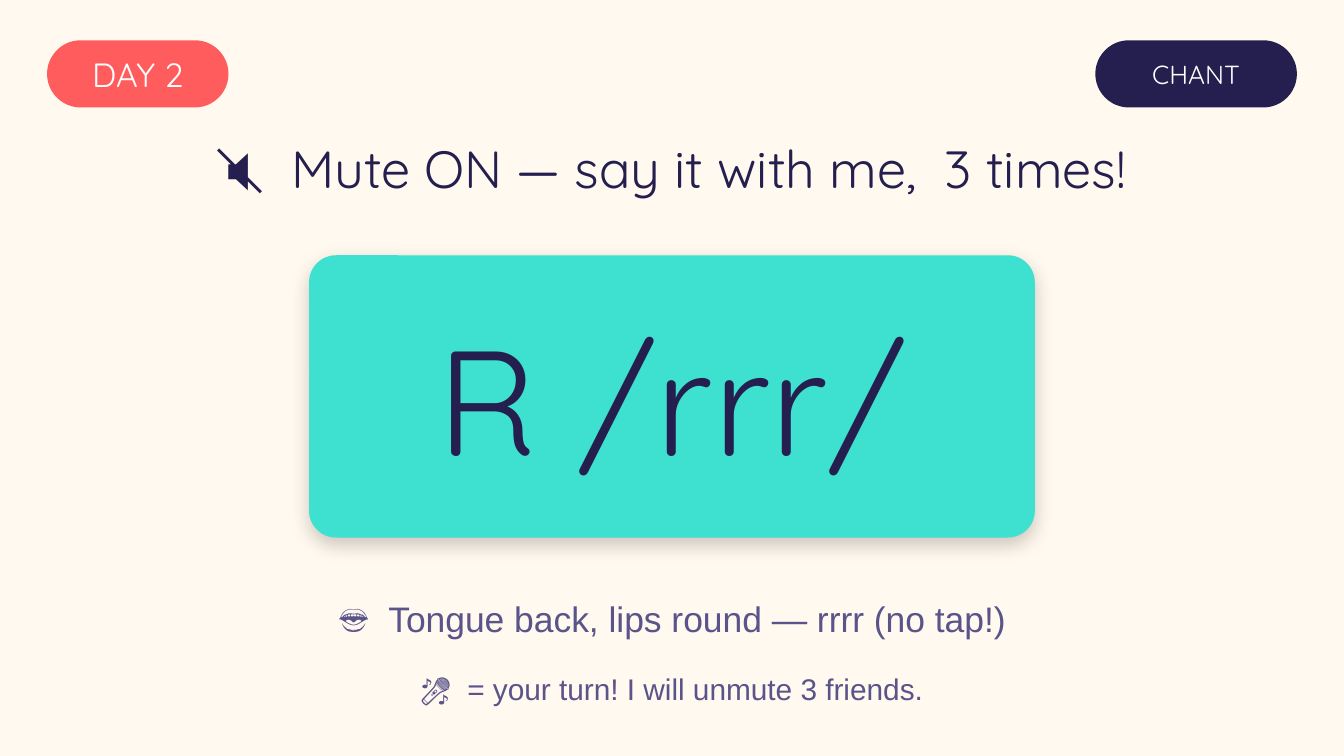
from dataclasses import dataclass

from lxml.etree import SubElement
from pptx import Presentation
from pptx.dml.color import RGBColor
from pptx.enum.shapes import MSO_SHAPE as Shape
from pptx.enum.text import MSO_ANCHOR as Anchor, PP_ALIGN as Align
from pptx.oxml.ns import qn
from pptx.shapes.autoshape import Shape as AutoShape
from pptx.slide import Slide
from pptx.util import Inches, Pt

CREAM, CORAL, NAVY, TEAL = "FFF9EF", "FF5D5D", "241F4E", "3EE0CF"
WHITE, VIOLET, BLACK = "FFFFFF", "5A548A", "000000"
HEADING, BODY = "Quicksand", "Arial"


@dataclass(frozen=True)
class Box:
    left: float
    top: float
    width: float
    height: float

    def lengths(self) -> tuple:
        return tuple(map(Inches, (self.left, self.top, self.width, self.height)))


@dataclass(frozen=True)
class Label:
    text: str
    box: Box
    size: int
    color: str
    font: str = HEADING
    inset: float | None = None


@dataclass(frozen=True)
class Panel:
    box: Box
    fill: str
    rounding: float


def rgb(value: str) -> RGBColor:
    return RGBColor.from_string(value)


def draw_panel(slide: Slide, panel: Panel) -> AutoShape:
    shape = slide.shapes.add_shape(Shape.ROUNDED_RECTANGLE, *panel.box.lengths())
    shape.adjustments[0] = panel.rounding
    shape.shadow.inherit = False
    shape.fill.solid()
    shape.fill.fore_color.rgb = rgb(panel.fill)
    shape.line.fill.background()
    return shape


def cast_shadow(shape: AutoShape) -> None:
    effects = shape._element.spPr.find(qn("a:effectLst"))
    shadow = SubElement(effects, qn("a:outerShdw"), blurRad=str(Pt(10)),
                        dist=str(Pt(4)), dir=str(90 * 60000), rotWithShape="0")
    color = SubElement(shadow, qn("a:srgbClr"), val=BLACK)
    SubElement(color, qn("a:alpha"), val=str(20 * 1000))


def draw_label(slide: Slide, label: Label) -> None:
    frame = slide.shapes.add_textbox(*label.box.lengths()).text_frame
    frame_format = {"word_wrap": True, "vertical_anchor": Anchor.MIDDLE}
    if label.inset is not None:
        for side in ("left", "top", "right", "bottom"):
            frame_format[f"margin_{side}"] = Inches(label.inset)
    for name, value in frame_format.items():
        setattr(frame, name, value)
    paragraph = frame.paragraphs[0]
    paragraph.alignment = Align.CENTER
    run = paragraph.add_run()
    run.text = label.text
    for name, value in {"name": label.font, "size": Pt(label.size)}.items():
        setattr(run.font, name, value)
    run.font.color.rgb = rgb(label.color)


def main() -> None:
    """Build the chant slide for the R sound."""
    deck = Presentation()
    deck.slide_width = Inches(10)
    deck.slide_height = deck.slide_width * 9 // 16
    slide = deck.slides.add_slide(deck.slide_layouts[6])
    slide.background.fill.solid()
    slide.background.fill.fore_color.rgb = rgb(CREAM)

    day = Box(0.35, 0.3, 1.35, 0.5)
    activity = Box(8.15, 0.3, 1.5, 0.5)
    for text, box, fill, size in (("DAY 2", day, CORAL, 18),
                                  ("CHANT", activity, NAVY, 14)):
        draw_panel(slide, Panel(box, fill, 0.5))
        draw_label(slide, Label(text, box, size, WHITE, inset=0))

    draw_label(slide, Label("🔇  Mute ON — say it with me,  3 times!",
                            Box(0, 0.95, 10, 0.6), 28, NAVY))

    sound = Box(2.3, 1.9, 5.4, 2.1)
    cast_shadow(draw_panel(slide, Panel(sound, TEAL, 0.2 / sound.height)))
    draw_label(slide, Label("R /rrr/", sound, 80, NAVY))

    hints = (
        Label("👄  Tongue back, lips round — rrrr (no tap!)",
              Box(0, 4.35, 10, 0.5), 19, VIOLET, BODY),
        Label("🎤  = your turn! I will unmute 3 friends.",
              Box(0, 4.9, 10, 0.45), 16, VIOLET, BODY),
    )
    for hint in hints:
        draw_label(slide, hint)

    deck.save("out.pptx")


if __name__ == "__main__":
    main()
